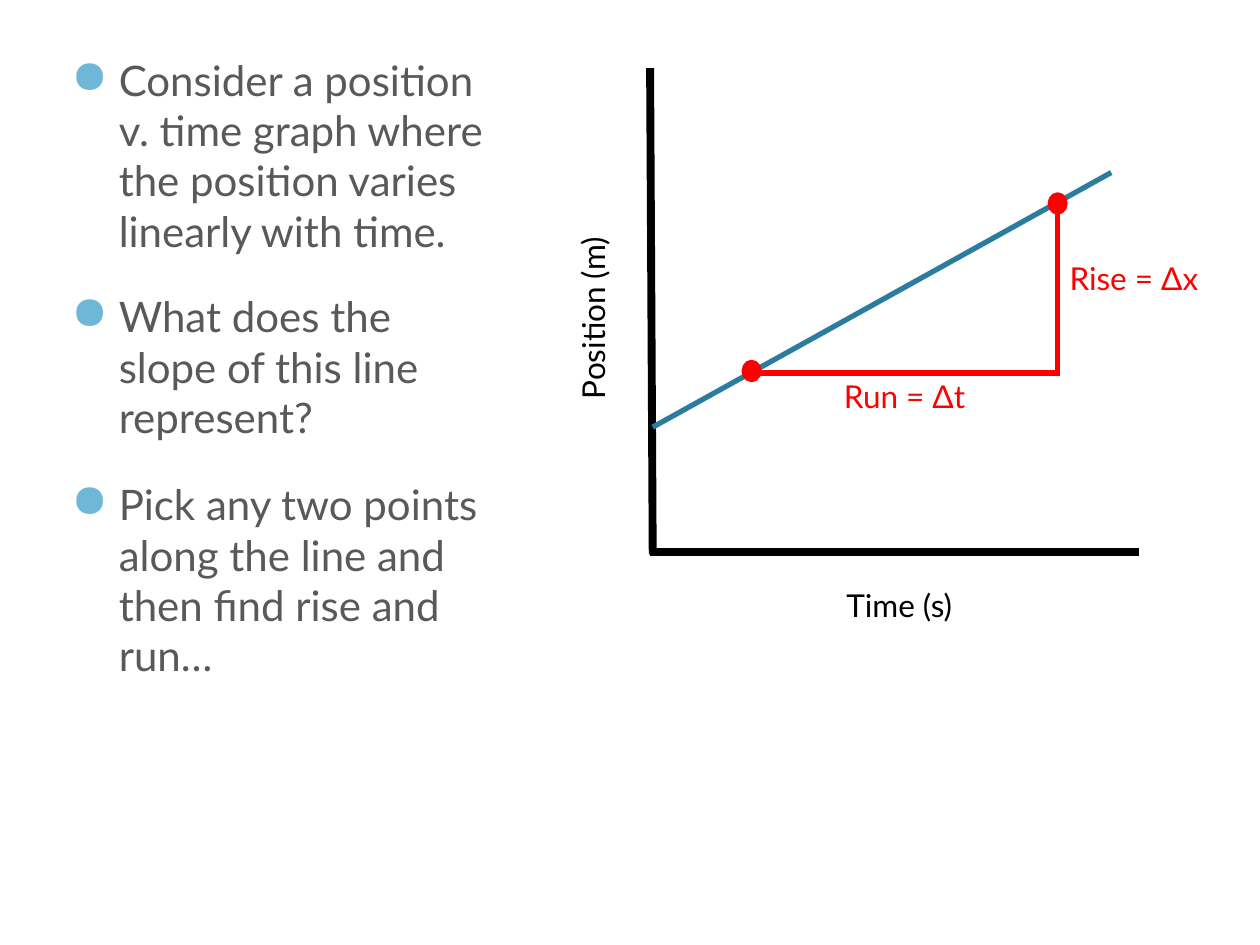
from lxml import etree
from pptx import Presentation
from pptx.dml.color import RGBColor
from pptx.enum.shapes import MSO_CONNECTOR, MSO_SHAPE
from pptx.enum.text import MSO_AUTO_SIZE
from pptx.oxml.ns import qn
from pptx.util import Pt

STRAIGHT = MSO_CONNECTOR.STRAIGHT
OVAL = MSO_SHAPE.OVAL
FIT_SHAPE = MSO_AUTO_SIZE.SHAPE_TO_FIT_TEXT

THEME = {
    "font": "Lato", "body_size": 24, "label_size": 18,
    "body": "595959", "bullet": "6FB7D7", "axis": "000000",
    "graph": "2C7C9F", "slope": "FF0000",
    "axis_width": 4.5, "graph_width": 3, "point_width": 2,
}

BODY_LEFT, BODY_WIDTH, BODY_INDENT = 33.8, 254.9, 27
BODY_BLOCKS = [
    (27.4, 242.6, [
        "Consider a position v. time graph where the position varies linearly with time.",
        "What does the slope of this line represent?",
    ]),
    (270, 246.2, ["Pick any two points along the line and then find rise and run…"]),
]

LINES = [
    ((371.5, 38.9), (373, 316.8), "axis"),
    ((650.9, 315.4), (371.5, 315.4), "axis"),
    ((373, 244.1), (635, 98.6), "graph"),
    ((429.8, 213.1), (605.5, 213.1), "slope"),
    ((604.1, 114.5), (604.1, 213.1), "slope"),
]
POINT_WIDTH, POINT_HEIGHT = 9.4, 10.8
POINT_CENTERS = [(604.4, 116.3), (429.5, 212)]

LABEL_HEIGHT = 29.1
LABELS = [
    ("Position (m)", 284.4, 166.2, 108.7, 270, "axis"),
    ("Time (s)", 476.6, 331.2, 76.3, 0, "axis"),
    ("Run = Δt", 475.2, 211.7, 95.8, 0, "slope"),
    ("Rise = Δx", 604.1, 144.7, 101.5, 0, "slope"),
]


def color(role):
    return RGBColor.from_string(THEME[role])


def add_words(paragraph, words, size, role):
    run = paragraph.add_run()
    run.text = words
    run.font.name = THEME["font"]
    run.font.size = Pt(THEME[size])
    run.font.color.rgb = color(role)


def add_bullet(paragraph):
    paragraph.space_before = Pt(20)
    properties = paragraph._p.get_or_add_pPr()
    properties.set("marL", str(Pt(BODY_INDENT)))
    properties.set("indent", str(-Pt(BODY_INDENT)))
    bullet_color = etree.SubElement(properties, qn("a:buClr"))
    etree.SubElement(bullet_color, qn("a:srgbClr"), val=THEME["bullet"])
    etree.SubElement(properties, qn("a:buSzPct"), val="110000")
    etree.SubElement(properties, qn("a:buChar"), char="●")


def add_body(slide, top, height, bullets):
    frame = slide.shapes.add_textbox(
        Pt(BODY_LEFT), Pt(top), Pt(BODY_WIDTH), Pt(height)).text_frame
    frame.word_wrap = True
    for index, words in enumerate(bullets):
        paragraph = frame.add_paragraph() if index else frame.paragraphs[0]
        add_bullet(paragraph)
        add_words(paragraph, words, "body_size", "body")


def add_line(slide, start, end, role):
    line = slide.shapes.add_connector(STRAIGHT, *map(Pt, start + end))
    line.line.color.rgb = color(role)
    line.line.width = Pt(THEME["axis_width" if role == "axis" else "graph_width"])
    etree.SubElement(line._element.spPr, qn("a:effectLst"))


def add_point(slide, x, y):
    point = slide.shapes.add_shape(
        OVAL, Pt(x - POINT_WIDTH / 2), Pt(y - POINT_HEIGHT / 2),
        Pt(POINT_WIDTH), Pt(POINT_HEIGHT))
    point.shadow.inherit = False
    point.fill.solid()
    point.fill.fore_color.rgb = color("slope")
    point.line.color.rgb = color("slope")
    point.line.width = Pt(THEME["point_width"])


def add_label(slide, words, left, top, width, rotation, role):
    label = slide.shapes.add_textbox(Pt(left), Pt(top), Pt(width), Pt(LABEL_HEIGHT))
    label.rotation = rotation
    label.text_frame.word_wrap = False
    label.text_frame.auto_size = FIT_SHAPE
    add_words(label.text_frame.paragraphs[0], words, "label_size", role)


def main():
    deck = Presentation()
    deck.slide_width, deck.slide_height = Pt(720), Pt(540)
    slide = deck.slides.add_slide(deck.slide_layouts[6])
    for block in BODY_BLOCKS:
        add_body(slide, *block)
    for line in LINES:
        add_line(slide, *line)
    for center in POINT_CENTERS:
        add_point(slide, *center)
    for label in LABELS:
        add_label(slide, *label)
    deck.save("out.pptx")


if __name__ == "__main__":
    main()
